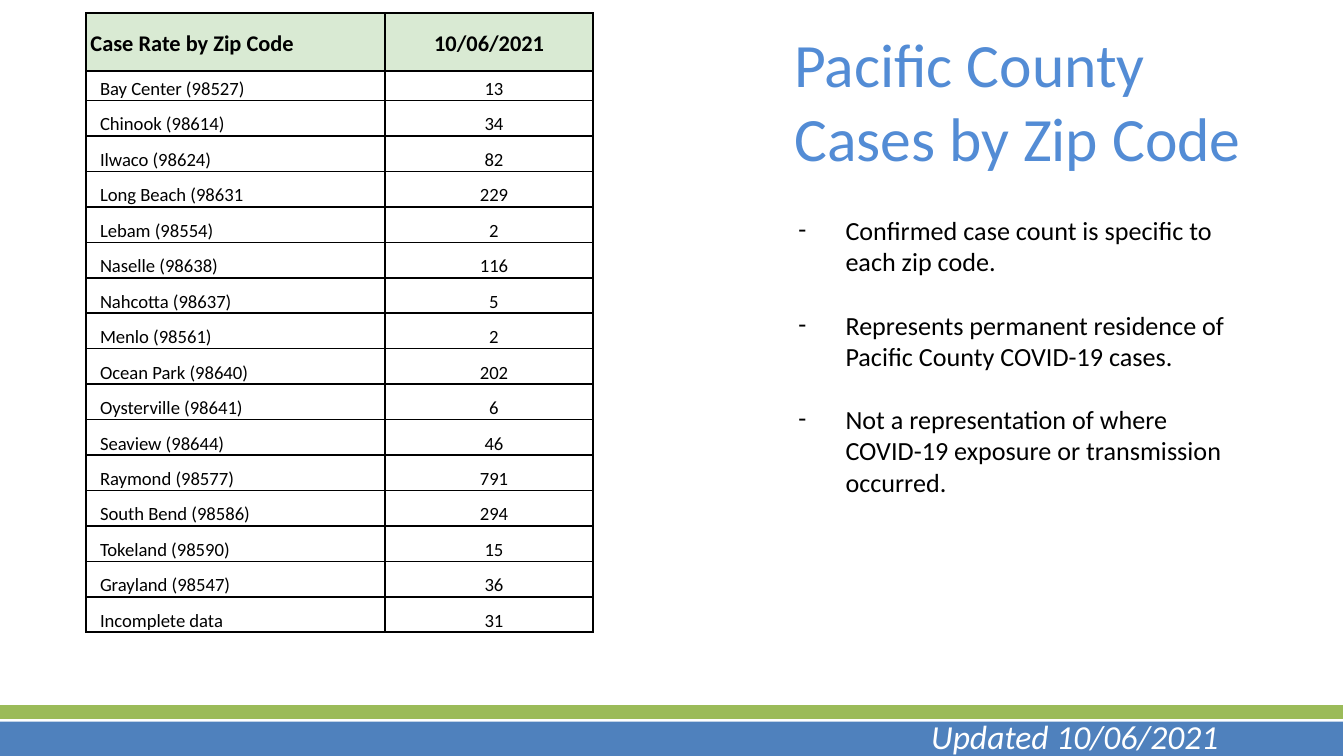
from typing import NamedTuple

from lxml import etree
from pptx import Presentation
from pptx.dml.color import RGBColor
from pptx.enum import shapes, text
from pptx.oxml import ns
from pptx.util import Cm, Pt

FONT = "Calibri"
BLACK, WHITE, BLUE, TITLE_BLUE = "000000", "FFFFFF", "4F81BD", "538CD5"
GREEN, PALE_GREEN = "9BBB59", "D9EAD3"
DATE = "10/06/2021"


class Area(NamedTuple):
    left: float
    top: float
    width: float
    height: float

    def lengths(self) -> list:
        return [Cm(value) for value in self]


class Style(NamedTuple):
    size: float
    color: str = BLACK
    bold: bool = False
    italic: bool = False


class ZipCount(NamedTuple):
    place: str
    cases: int


HEADER = Style(12, bold=True)
BODY = Style(10)
TITLE = Style(33, TITLE_BLUE)
NOTE = Style(14)
FOOTER = Style(18, WHITE, italic=True)

COUNTS = [
    ZipCount("Bay Center (98527)", 13),
    ZipCount("Chinook (98614)", 34),
    ZipCount("Ilwaco (98624)", 82),
    ZipCount("Long Beach (98631", 229),
    ZipCount("Lebam (98554)", 2),
    ZipCount("Naselle (98638)", 116),
    ZipCount("Nahcotta (98637)", 5),
    ZipCount("Menlo (98561)", 2),
    ZipCount("Ocean Park (98640)", 202),
    ZipCount("Oysterville (98641)", 6),
    ZipCount("Seaview (98644)", 46),
    ZipCount("Raymond (98577)", 791),
    ZipCount("South Bend (98586)", 294),
    ZipCount("Tokeland (98590)", 15),
    ZipCount("Grayland (98547)", 36),
    ZipCount("Incomplete data", 31),
]
TITLE_LINES = ["Pacific County", "Cases by Zip Code"]
NOTES = [
    "Confirmed case count is specific to each zip code.",
    "Represents permanent residence of Pacific County COVID-19 cases.",
    "Not a representation of where COVID-19 exposure or transmission occurred.",
]


def rgb(value: str) -> RGBColor:
    return RGBColor.from_string(value)


def write(para, words: str, style: Style) -> None:
    para.text = words
    for span in para.runs:
        span.font.name = FONT
        span.font.size = Pt(style.size)
        span.font.bold = style.bold
        span.font.italic = style.italic
        span.font.color.rgb = rgb(style.color)


def indent(para, left: float, first: float = 0) -> None:
    """Set the left margin and first-line indent in centimetres."""
    properties = para._p.get_or_add_pPr()
    properties.set("marL", str(Cm(left)))
    properties.set("indent", str(Cm(first)))


def add_dash(para) -> None:
    properties = para._p.get_or_add_pPr()
    color = etree.SubElement(properties, ns.qn("a:buClr"))
    etree.SubElement(color, ns.qn("a:srgbClr"), val=BLACK)
    etree.SubElement(properties, ns.qn("a:buFont"), typeface=FONT)
    etree.SubElement(properties, ns.qn("a:buChar"), char="-")


def add_borders(cell) -> None:
    properties = cell._tc.get_or_add_tcPr()
    for side in ("lnL", "lnR", "lnT", "lnB"):
        line = etree.SubElement(properties, ns.qn(f"a:{side}"), w=str(Pt(1)))
        fill = etree.SubElement(line, ns.qn("a:solidFill"))
        etree.SubElement(fill, ns.qn("a:srgbClr"), val=BLACK)


def add_text_frame(page, area: Area):
    frame = page.shapes.add_textbox(*area.lengths()).text_frame
    frame.word_wrap = True
    return frame


def add_band(page, area: Area, color: str) -> None:
    band = page.shapes.add_shape(shapes.MSO_SHAPE.RECTANGLE, *area.lengths())
    band.shadow.inherit = False
    band.fill.solid()
    band.fill.fore_color.rgb = rgb(color)
    band.line.fill.background()


def fill_cell(cell, words: str, is_header: bool, centered: bool) -> None:
    add_borders(cell)
    cell.vertical_anchor = text.MSO_ANCHOR.BOTTOM
    cell.margin_left = cell.margin_right = Cm(0.08)
    cell.margin_top = cell.margin_bottom = Cm(0.25 if is_header else 0)
    para = cell.text_frame.paragraphs[0]
    write(para, words, HEADER if is_header else BODY)
    para.line_spacing = 1.15
    if centered:
        para.alignment = text.PP_ALIGN.CENTER
    if is_header:
        cell.fill.solid()
        cell.fill.fore_color.rgb = rgb(PALE_GREEN)
    else:
        cell.fill.background()
        indent(para, 0.18)


def add_case_table(page, area: Area) -> None:
    rows = [("Case Rate by Zip Code", DATE)]
    rows += [(count.place, str(count.cases)) for count in COUNTS]
    table = page.shapes.add_table(len(rows), 2, *area.lengths()).table
    table.first_row = table.horz_banding = False
    for column, width in zip(table.columns, (5.65, 3.93)):
        column.width = Cm(width)
    heights = [1.09, 0.56] + [0.67] * (len(rows) - 2)
    for index, (words, height) in enumerate(zip(rows, heights)):
        table.rows[index].height = Cm(height)
        for column, value in enumerate(words):
            fill_cell(table.cell(index, column), value, index == 0, column == 1)


def add_explanation(page, area: Area) -> None:
    frame = add_text_frame(page, area)
    frame.text = "\n".join(TITLE_LINES + NOTES)
    title_count = len(TITLE_LINES)
    for para in frame.paragraphs[:title_count]:
        write(para, para.text, TITLE)
    for index, para in enumerate(frame.paragraphs[title_count:]):
        write(para, para.text, NOTE)
        para.space_before = Pt(17 if index else 22)
        indent(para, 0.97, -0.89)
        add_dash(para)


def main() -> None:
    deck = Presentation()
    deck.slide_width, deck.slide_height = Cm(25.4), Cm(14.29)
    page = deck.slides.add_slide(deck.slide_layouts[6])

    add_explanation(page, Area(14.76, 0.36, 9.09, 13))
    add_band(page, Area(-0.02, 13.33, 25.4, 0.26), GREEN)
    add_band(page, Area(-0.02, 13.64, 25.4, 0.65), BLUE)
    footer = add_text_frame(page, Area(17.35, 13.41, 6.78, 1.02))
    write(footer.paragraphs[0], f"Updated {DATE}", FOOTER)
    add_case_table(page, Area(1.63, 0.25, 9.58, 11.7))

    deck.save("out.pptx")


if __name__ == "__main__":
    main()
